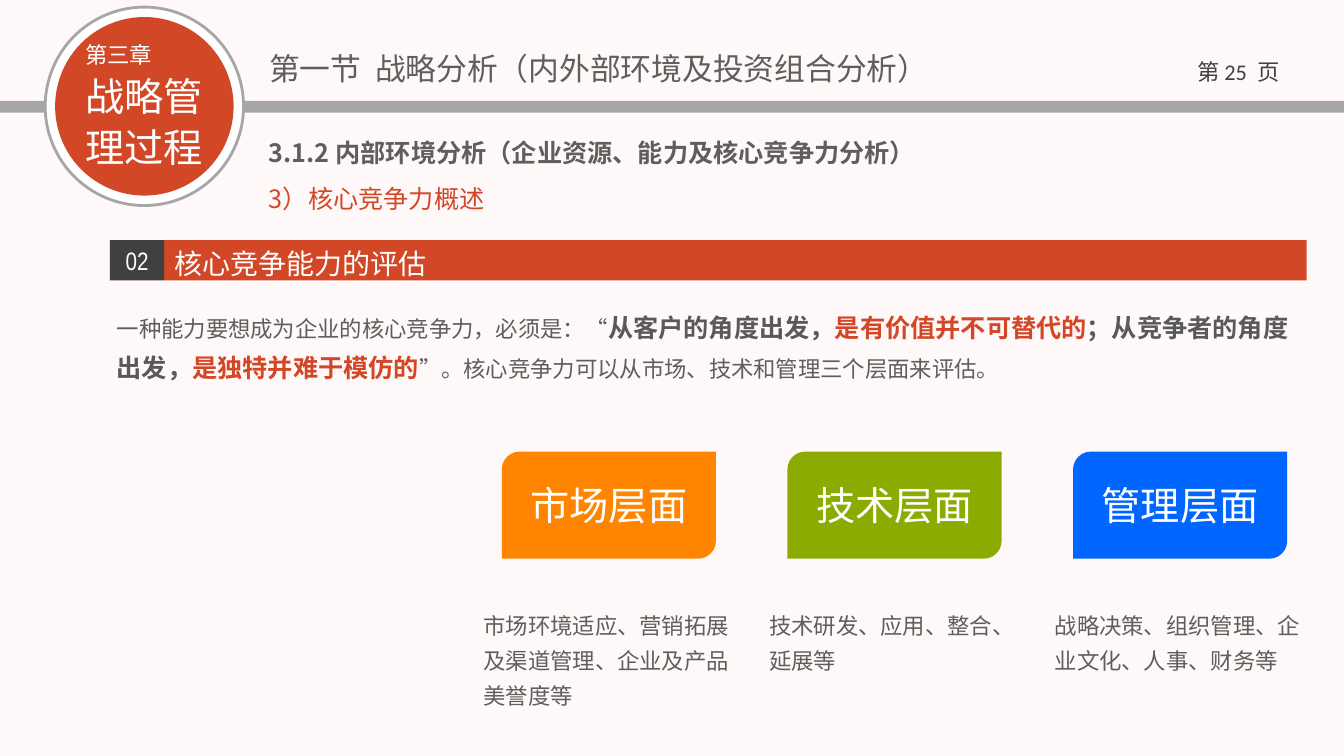
from lxml import etree
from pptx import Presentation
from pptx.dml.color import RGBColor
from pptx.enum.shapes import MSO_SHAPE
from pptx.enum.text import MSO_ANCHOR, MSO_AUTO_SIZE, PP_ALIGN
from pptx.oxml.ns import qn
from pptx.util import Cm, Pt

RECT, OVAL = MSO_SHAPE.RECTANGLE, MSO_SHAPE.OVAL
LEAF = MSO_SHAPE.ROUND_2_DIAG_RECTANGLE
LEFT, CENTER = PP_ALIGN.LEFT, PP_ALIGN.CENTER
TOP, MIDDLE = MSO_ANCHOR.TOP, MSO_ANCHOR.MIDDLE
GROW, FIXED = MSO_AUTO_SIZE.SHAPE_TO_FIT_TEXT, MSO_AUTO_SIZE.NONE

HAN, LATIN, NARROW = "Noto Sans CJK SC", "Calibri", "Arial Narrow"
COLORS = {
    "back": "FFF8F8", "white": "FFFFFF", "red": "D24726", "gray": "A6A6A6",
    "dark": "404040", "text": "5F5E5C", "strong": "595959",
    "orange": "FF8500", "green": "8BAB00", "blue": "0066FF",
}


class Deck:
    """Holds the style and the current slide."""

    def __init__(self, width, height):
        self.show = Presentation()
        self.show.slide_width, self.show.slide_height = Cm(width), Cm(height)
        self.slide = self.show.slides.add_slide(self.show.slide_layouts[1])
        self.paint(self.slide.background.fill, "back")

    def paint(self, fill, color):
        fill.solid()
        fill.fore_color.rgb = RGBColor.from_string(COLORS[color])

    def place(self, shape, box):
        shape.left, shape.top, shape.width, shape.height = map(Cm, box)

    def style(self, run, size, color, bold=False, font=HAN):
        run.font.size, run.font.bold, run.font.name = Pt(size), bold, font
        run.font.color.rgb = RGBColor.from_string(COLORS[color])
        east = etree.Element(qn("a:ea"), typeface=font)
        run.font._element.find(qn("a:latin")).addnext(east)

    def label(self, shape, lines, align=LEFT, anchor=TOP, space=1.0,
              before=0, after=0, fit=GROW):
        """Put text in a shape; a line is a list of (text, size, color, ...)."""
        frame = shape.text_frame
        frame.word_wrap, frame.auto_size = True, fit
        frame.vertical_anchor = anchor
        for i, line in enumerate(lines):
            para = frame.add_paragraph() if i else frame.paragraphs[0]
            para.alignment, para.line_spacing = align, space
            para.space_before = Pt(0 if i else before)
            para.space_after = Pt(after)
            for text, *look in line:
                run = para.add_run()
                run.text = text
                self.style(run, *look)

    def shape(self, kind, box, color, edge=None):
        shape = self.slide.shapes.add_shape(kind, *map(Cm, box))
        shape.shadow.inherit = False
        self.paint(shape.fill, color)
        if edge:
            self.paint(shape.line.fill, edge)
            shape.line.width = Pt(2)
        else:
            shape.line.fill.background()
        return shape

    def text(self, box, lines, **look):
        self.label(self.slide.shapes.add_textbox(*map(Cm, box)), lines, **look)

    def title(self, box, line):
        shape = self.slide.shapes.title
        self.place(shape, box)
        self.label(shape, [line])

    def body(self, box, line, **look):
        shape = self.slide.placeholders[1]
        self.place(shape, box)
        self.label(shape, [line], **look)
        for para in shape.text_frame.paragraphs:
            props = para._p.get_or_add_pPr()
            props.set("marL", "0")
            props.set("indent", "0")
            etree.SubElement(props, qn("a:buNone"))


def header(deck):
    deck.shape(RECT, (0, 2.54, 33.88, 0.3), "gray")
    deck.shape(OVAL, (1.14, 0.18, 5, 5), "white", "gray")
    deck.shape(OVAL, (1.39, 0.43, 4.5, 4.5), "red")
    deck.text((29.69, 1.3, 3.05, 1.02), [[
        ("第 ", 16, "dark"), ("25  ", 16, "dark", False, LATIN),
        ("页", 16, "dark")]], align=CENTER, anchor=MIDDLE, fit=FIXED)
    deck.text((1.9, 0.91, 4.4, 3.56), [
        [("第三章", 16, "white")],
        [("战略管", 28, "white")],
        [("理过程", 28, "white")]], before=4, after=3)
    deck.title((6.53, 1.12, 19.4, 1.19),
               [("第一节  战略分析（内外部环境及投资组合分析）", 22, "text")])
    deck.text((6.53, 3.12, 17.6, 1.24), [[
        ("3.1.2 内部环境分析（企业资源、能力及核心竞争力分析）",
         18, "text", True)]], space=1.3)
    deck.text((6.53, 4.27, 16, 1.24),
              [[("3）核心竞争力概述", 18, "red")]], space=1.3)


def banner(deck):
    deck.shape(RECT, (4.14, 6.05, 28.8, 1.02), "red")
    deck.text((4.14, 5.92, 20.6, 1.27),
              [[("核心竞争能力的评估", 20, "white")]], space=1.2, after=5)
    tag = deck.shape(RECT, (2.77, 6.05, 1.37, 1.02), "dark")
    deck.label(tag, [[("02", 18, "white", False, NARROW)]],
               align=CENTER, anchor=MIDDLE, fit=FIXED)
    deck.body((2.69, 7.52, 30.5, 2.16), [
        ("一种能力要想成为企业的核心竞争力，必须是：“", 16, "text"),
        ("从客户的角度出发，", 18, "strong", True),
        ("是有价值并不可替代的", 18, "red", True),
        ("；从竞争者的角度出发，", 18, "strong", True),
        ("是独特并难于模仿的", 18, "red", True),
        ("”。核心竞争力可以从市场、技术和管理三个层面来评估。", 16, "text"),
    ], space=1.3, after=6)


def cards(deck):
    levels = [
        ("市场层面", "orange",
         "市场环境适应、营销拓展及渠道管理、企业及产品美誉度等"),
        ("技术层面", "green", "技术研发、应用、整合、延展等"),
        ("管理层面", "blue", "战略决策、组织管理、企业文化、人事、财务等"),
    ]
    for i, (name, color, note) in enumerate(levels):
        step = 7.2 * i
        card = deck.shape(LEAF, (12.65 + step, 11.38, 5.4, 2.7), color)
        deck.label(card, [[(name, 28, "white")]],
                   align=CENTER, anchor=MIDDLE, fit=FIXED)
        deck.text((11.94 + step, 15.09, 6.8, 2.03),
                  [[(note, 16, "text")]], space=1.3, after=6)


def main():
    deck = Deck(33.88, 19.05)
    header(deck)
    banner(deck)
    cards(deck)
    deck.show.save("out.pptx")


if __name__ == "__main__":
    main()
